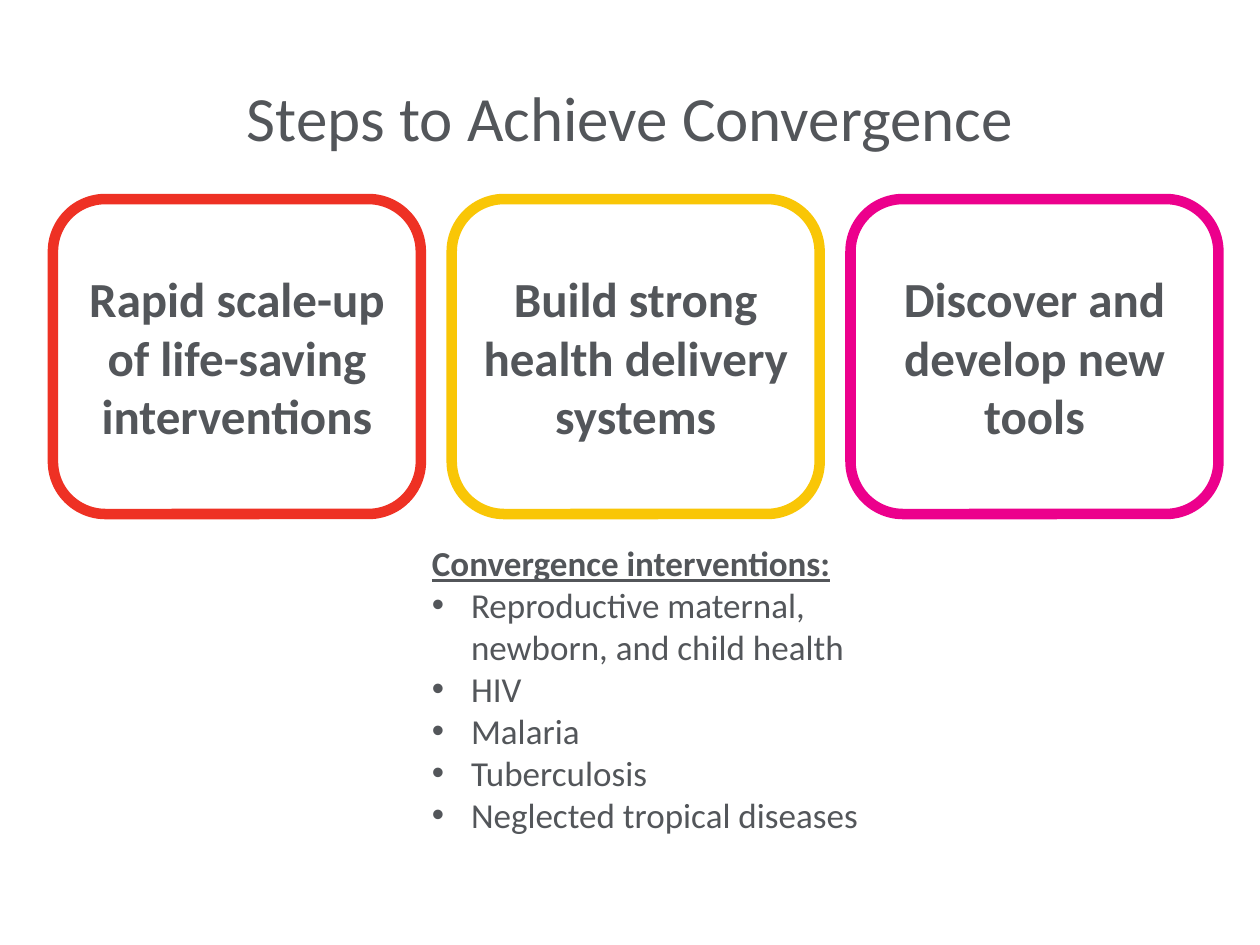
from lxml import etree
from pptx import Presentation
from pptx.dml.color import RGBColor
from pptx.enum.shapes import MSO_SHAPE
from pptx.enum.text import MSO_ANCHOR, MSO_AUTO_SIZE, PP_ALIGN
from pptx.oxml.ns import qn
from pptx.util import Inches, Pt

ROUNDED = MSO_SHAPE.ROUNDED_RECTANGLE
MIDDLE = MSO_ANCHOR.MIDDLE
CENTER, LEFT = PP_ALIGN.CENTER, PP_ALIGN.LEFT
FIT_SHAPE = MSO_AUTO_SIZE.SHAPE_TO_FIT_TEXT

FONT = "Calibri"
GREY = RGBColor(0x53, 0x56, 0x5A)
WHITE = RGBColor(0xFF, 0xFF, 0xFF)
RED = RGBColor(0xEE, 0x31, 0x24)
YELLOW = RGBColor(0xF9, 0xC6, 0x06)
MAGENTA = RGBColor(0xEC, 0x00, 0x8C)

TITLE = "Steps to Achieve Convergence"
STEPS = [
    ("Rapid scale-up of life-saving interventions", RED),
    ("Build strong health delivery systems", YELLOW),
    ("Discover and develop new tools", MAGENTA),
]
LIST_HEADING = "Convergence interventions:"
INTERVENTIONS = [
    "Reproductive maternal, newborn, and child health",
    "HIV",
    "Malaria",
    "Tuberculosis",
    "Neglected tropical diseases",
]

STEP_LEFT, STEP_TOP, STEP_PITCH = 0.42, 1.58, 3.165
STEP_WIDTH, STEP_HEIGHT = 2.92, 2.5
BULLET_INDENT = Inches(0.31)


def style(paragraph, size, bold=False, underline=False, align=LEFT):
    paragraph.alignment = align
    for span in paragraph.runs:
        span.font.name = FONT
        span.font.size = Pt(size)
        span.font.bold = bold
        span.font.underline = underline
        span.font.color.rgb = GREY


def add_bullet(paragraph):
    properties = paragraph._p.get_or_add_pPr()
    properties.set("marL", str(BULLET_INDENT))
    properties.set("indent", str(-BULLET_INDENT))
    etree.SubElement(properties, qn("a:buFont")).set("typeface", "Arial")
    etree.SubElement(properties, qn("a:buChar")).set("char", "•")


def add_title(page):
    title = page.shapes.title
    title.left, title.top = Inches(0.5), Inches(0.3)
    title.width, title.height = Inches(9), Inches(1.25)
    title.text_frame.text = TITLE
    title.text_frame.vertical_anchor = MIDDLE
    style(title.text_frame.paragraphs[0], 36, align=CENTER)


def add_steps(page):
    for index, (text, color) in enumerate(STEPS):
        left = STEP_LEFT + index * STEP_PITCH
        box = page.shapes.add_shape(ROUNDED, Inches(left), Inches(STEP_TOP),
                                    Inches(STEP_WIDTH), Inches(STEP_HEIGHT))
        box.shadow.inherit = False
        box.fill.solid()
        box.fill.fore_color.rgb = WHITE
        box.line.color.rgb = color
        box.line.width = Pt(6)
        box.text_frame.text = text
        box.text_frame.word_wrap = True
        box.text_frame.vertical_anchor = MIDDLE
        style(box.text_frame.paragraphs[0], 28, bold=True, align=CENTER)


def add_interventions(page):
    box = page.shapes.add_textbox(Inches(3.33), Inches(4.25),
                                  Inches(3.62), Inches(2.46))
    frame = box.text_frame
    frame.word_wrap = True
    frame.auto_size = FIT_SHAPE
    frame.text = LIST_HEADING
    style(frame.paragraphs[0], 20, bold=True, underline=True)
    for text in INTERVENTIONS:
        paragraph = frame.add_paragraph()
        paragraph.text = text
        add_bullet(paragraph)
        style(paragraph, 20)


def main():
    deck = Presentation()
    deck.slide_width, deck.slide_height = Inches(10), Inches(7.5)
    page = deck.slides.add_slide(deck.slide_layouts.get_by_name("Title Only"))
    add_title(page)
    add_steps(page)
    add_interventions(page)
    deck.save("out.pptx")


if __name__ == "__main__":
    main()
